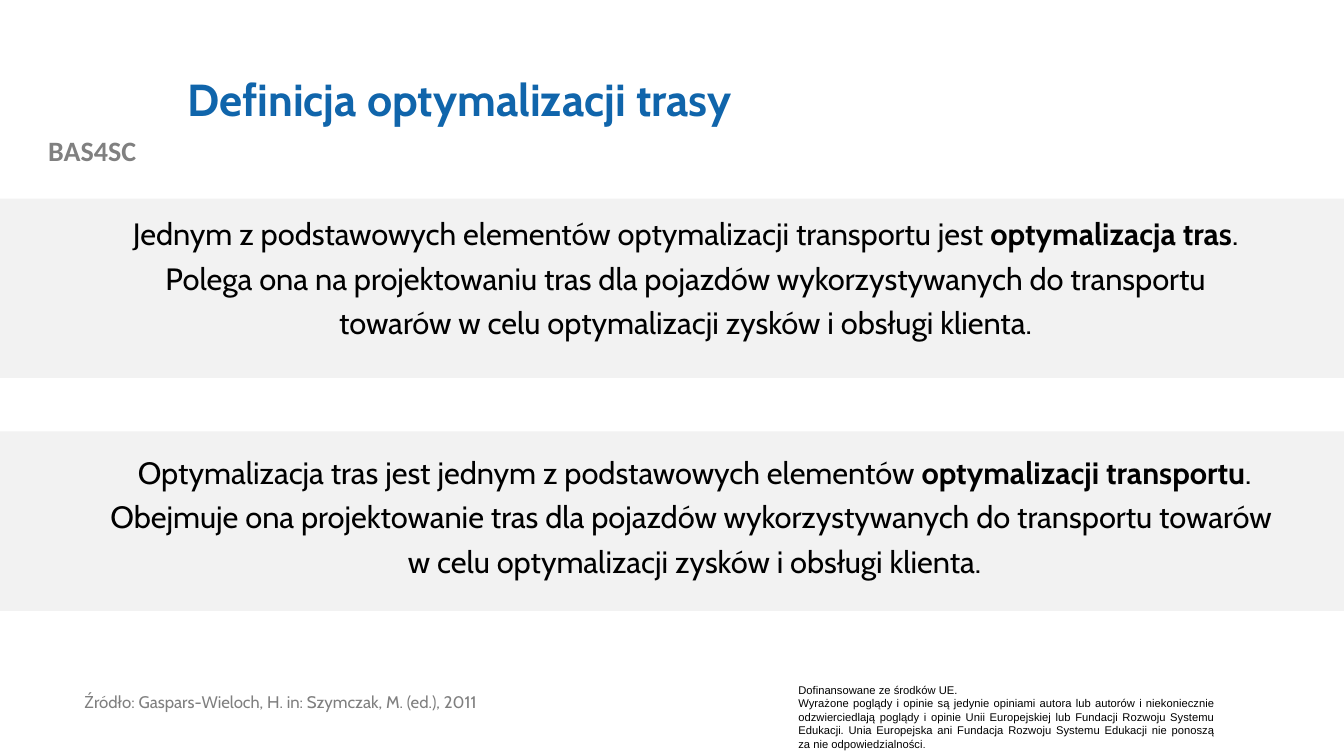
from pptx import Presentation
from pptx import util as u
from pptx.dml.color import RGBColor
from pptx.enum import shapes, text

BLUE = RGBColor(0x10, 0x65, 0xAB)
BLACK = RGBColor(0x00, 0x00, 0x00)
GREY = RGBColor(0x80, 0x80, 0x80)
SOURCE_GREY = RGBColor(0x7F, 0x7F, 0x7F)
BAND_GREY = RGBColor(0xF2, 0xF2, 0xF2)

WIDTH, HEIGHT = u.Inches(13.33), u.Inches(7.5)
LEFT, CENTER, JUSTIFY = text.PP_ALIGN.LEFT, text.PP_ALIGN.CENTER, text.PP_ALIGN.JUSTIFY
TOP, MIDDLE = text.MSO_ANCHOR.TOP, text.MSO_ANCHOR.MIDDLE

BAND_TOPS = [26.27, 57.07]
BAND_HEIGHT = 23.73

STYLES = {
    "project": dict(name="Calibri", size=u.Pt(20), bold=True, color=GREY),
    "title": dict(name="Cabin", size=u.Pt(32), bold=True, color=BLUE),
    "body": dict(name="Cabin", size=u.Pt(22), bold=False, color=BLACK),
    "strong": dict(name="Cabin", size=u.Pt(22), bold=True, color=BLACK),
    "source": dict(name="Cabin", size=u.Pt(12), bold=False, color=SOURCE_GREY),
    "notice": dict(name="Arial", size=u.Pt(8), bold=False, color=BLACK),
    "notice_end": dict(name="Arial", size=u.Pt(7), bold=False, color=BLACK),
}

TEXTS = [
    ((0, 17.07, 13.73, 5.87), TOP, dict(alignment=CENTER), [[("BAS4SC", "project")]]),
    ((58.66, 89.73, 32.48, 10.27), TOP, dict(alignment=JUSTIFY), [
        [("Dofinansowane ze środków UE.", "notice")],
        [("Wyrażone poglądy i opinie są jedynie opiniami autora lub autorów i niekoniecznie "
          "odzwierciedlają poglądy i opinie Unii Europejskiej lub Fundacji Rozwoju Systemu "
          "Edukacji. Unia Europejska ani Fundacja Rozwoju Systemu Edukacji nie ponoszą za "
          "nie odpowiedzialności", "notice"), (".", "notice_end")],
    ]),
    ((13.2, 5.33, 79.97, 16.27), MIDDLE, dict(alignment=LEFT, line_spacing=0.9),
     [[("Definicja optymalizacji trasy", "title")]]),
    ((7.88, 26.8, 86.27, 22.53), TOP, dict(alignment=CENTER, line_spacing=1.2), [[
        ("Jednym z podstawowych elementów optymalizacji transportu jest ", "body"),
        ("optymalizacja tras", "strong"),
        (". Polega ona na projektowaniu tras dla pojazdów wykorzystywanych do transportu "
         "towarów w celu optymalizacji zysków i obsługi klienta.", "body"),
    ]]),
    ((6.98, 58.4, 89.42, 22.53), TOP, dict(alignment=CENTER, line_spacing=1.2), [[
        ("Optymalizacja tras jest jednym z podstawowych elementów ", "body"),
        ("optymalizacji transportu", "strong"),
        (". Obejmuje ona projektowanie tras dla pojazdów wykorzystywanych do transportu "
         "towarów \nw celu optymalizacji zysków i obsługi klienta.", "body"),
    ]]),
    ((5.55, 91.2, 42.01, 6.93), TOP, dict(alignment=LEFT, line_spacing=0.9),
     [[("Źródło: Gaspars-Wieloch, H. in: Szymczak, M. (ed.), 2011", "source")]]),
]


def place(left, top, width, height):
    return [round(share * side / 100) for share, side in
            zip((left, top, width, height), (WIDTH, HEIGHT, WIDTH, HEIGHT))]


def set_all(target, values):
    for key, value in values.items():
        setattr(target, key, value)


def add_run(paragraph, words, style):
    for index, line in enumerate(words.split("\n")):
        if index:
            paragraph.add_line_break()
        run = paragraph.add_run()
        run.text = line
        set_all(run.font, {key: value for key, value in style.items() if key != "color"})
        run.font.color.rgb = style["color"]


def add_text(slide, area, anchor, layout, paragraphs):
    frame = slide.shapes.add_textbox(*place(*area)).text_frame
    set_all(frame, dict(word_wrap=True, vertical_anchor=anchor))
    for index, runs in enumerate(paragraphs):
        paragraph = frame.add_paragraph() if index else frame.paragraphs[0]
        set_all(paragraph, layout)
        for words, style in runs:
            add_run(paragraph, words, STYLES[style])


def add_band(slide, top):
    band = slide.shapes.add_shape(shapes.MSO_SHAPE.RECTANGLE, *place(0, top, 100, BAND_HEIGHT))
    band.shadow.inherit = False
    band.fill.solid()
    band.fill.fore_color.rgb = BAND_GREY
    band.line.fill.background()


def main():
    presentation = Presentation()
    set_all(presentation, dict(slide_width=WIDTH, slide_height=HEIGHT))
    slide = presentation.slides.add_slide(presentation.slide_layouts[6])
    for top in BAND_TOPS:
        add_band(slide, top)
    for block in TEXTS:
        add_text(slide, *block)
    presentation.save("out.pptx")


if __name__ == "__main__":
    main()
